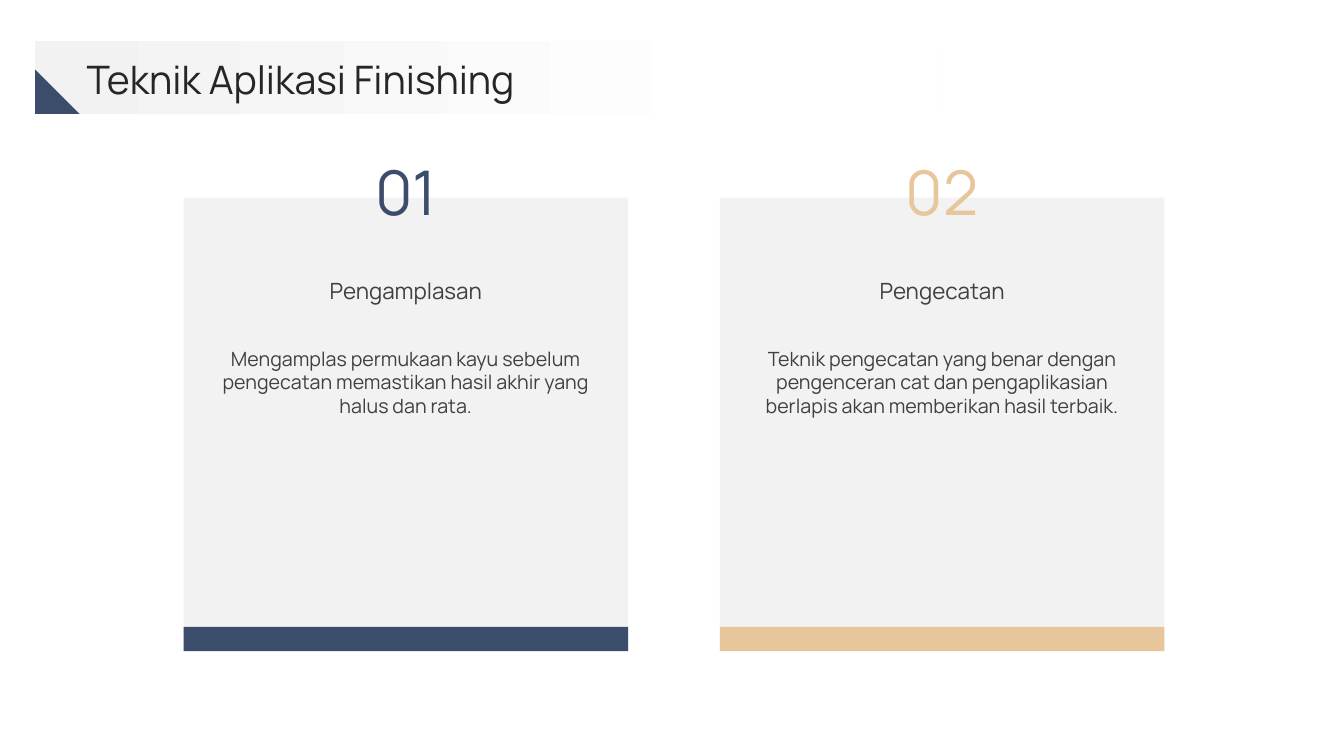
import pptx
import pptx.dml.color
import pptx.enum.shapes
import pptx.enum.text
import pptx.util

Inches = pptx.util.Inches
Shape = pptx.enum.shapes.MSO_SHAPE
Anchor = pptx.enum.text.MSO_ANCHOR
Align = pptx.enum.text.PP_ALIGN


def color(code):
    return pptx.dml.color.RGBColor.from_string(code)


def write(box, text, size, code, align, anchor, inset):
    """Fill a text box or placeholder with one formatted run; inset is (side, top) in inches."""
    frame = box.text_frame
    frame.word_wrap = True
    frame.auto_size = pptx.enum.text.MSO_AUTO_SIZE.NONE
    frame.vertical_anchor = anchor
    frame.margin_left = frame.margin_right = Inches(inset[0])
    frame.margin_top = frame.margin_bottom = Inches(inset[1])
    para = frame.paragraphs[0]
    para.alignment = align
    span = para.add_run()
    span.text = text
    span.font.name = "Manrope"
    span.font.size = pptx.util.Pt(size)
    span.font.color.rgb = color(code)


NAVY, SAND, GRAY, INK, TITLE_INK = "3C4C6B", "E6C69A", "F2F2F2", "404040", "262626"
CARDS = [
    ("01", NAVY, "Pengamplasan",
     "Mengamplas permukaan kayu sebelum pengecatan memastikan hasil akhir yang halus dan rata."),
    ("02", SAND, "Pengecatan",
     "Teknik pengecatan yang benar dengan pengenceran cat dan pengaplikasian "
     "berlapis akan memberikan hasil terbaik."),
]
CARD_LEFT, CARD_TOP, CARD_WIDTH, CARD_HEIGHT = 1.82, 1.96, 4.41, 4.5
CARD_STEP = 5.32
STRIPE = 0.24

deck = pptx.Presentation()
deck.slide_width = Inches(13.33)
deck.slide_height = Inches(7.5)
page = deck.slides.add_slide(deck.slide_layouts.get_by_name("Title Only"))
shapes = page.shapes

# Cards: panel, stripe along its foot, then centred texts
for column, (number, accent, heading, body) in enumerate(CARDS):
    left = CARD_LEFT + column * CARD_STEP
    stripe_top = CARD_TOP + CARD_HEIGHT - STRIPE
    for top, height, fill in [(CARD_TOP, CARD_HEIGHT, GRAY), (stripe_top, STRIPE, accent)]:
        panel = shapes.add_shape(Shape.RECTANGLE, Inches(left), Inches(top),
                                 Inches(CARD_WIDTH), Inches(height))
        panel.shadow.inherit = False
        panel.fill.solid()
        panel.fill.fore_color.rgb = color(fill)
        panel.line.fill.background()
    for text, size, code, top, width, height, anchor in [
        (number, 44, accent, 1.48, 1.65, 0.89, Anchor.TOP),
        (heading, 16, INK, 2.46, 3.97, 0.85, Anchor.MIDDLE),
        (body, 14, INK, 3.39, 3.97, 2.52, Anchor.TOP),
    ]:
        box = shapes.add_textbox(Inches(left + (CARD_WIDTH - width) / 2), Inches(top),
                                 Inches(width), Inches(height))
        write(box, text, size, code, Align.CENTER, anchor, (0.1, 0.05))

# Title banner fading to white, with a corner triangle
banner = shapes.add_shape(Shape.ROUNDED_RECTANGLE, Inches(0.35), Inches(0.41),
                          Inches(8.94), Inches(0.72))
banner.adjustments[0] = 0
banner.fill.gradient()
banner.fill.gradient_angle = 0
for stop, position, code in zip(banner.fill.gradient_stops, (0, 0.8), (GRAY, "FFFFFF")):
    stop.position = position
    stop.color.rgb = color(code)

corner = shapes.add_shape(Shape.RIGHT_TRIANGLE, Inches(0.35), Inches(0.69),
                          Inches(0.44), Inches(0.44))
corner.fill.solid()
corner.fill.fore_color.rgb = color(NAVY)
for shape in (banner, corner):
    shape.shadow.inherit = False
    shape.line.fill.background()

title = shapes.title
title.left, title.top = Inches(0.86), Inches(0.53)
title.width, title.height = Inches(11.67), Inches(0.51)
write(title, "Teknik Aplikasi Finishing", 28, TITLE_INK, Align.LEFT, Anchor.MIDDLE, (0, 0))
corner.element.addprevious(title.element)  # lift the title above the banner

deck.save("out.pptx")
